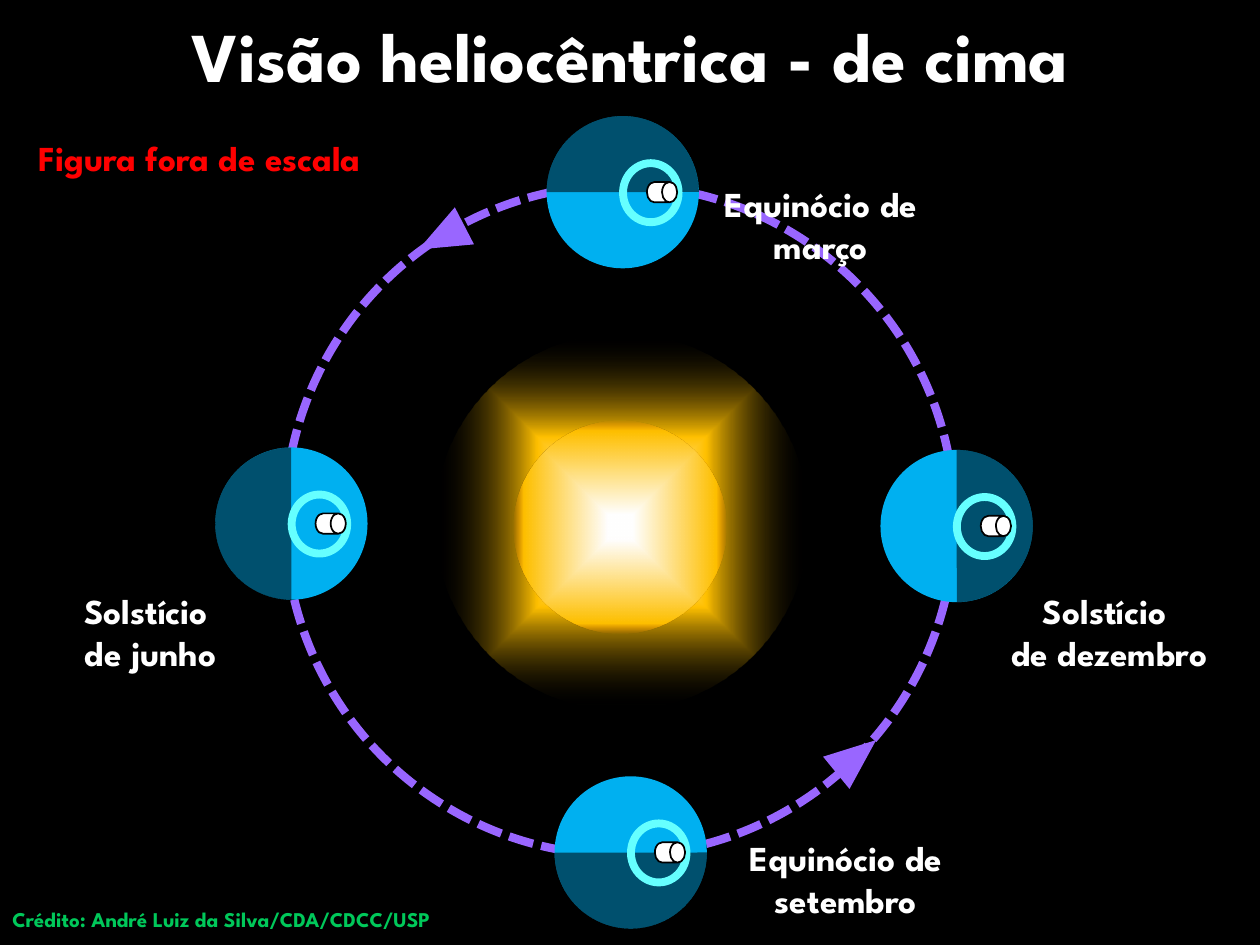
from typing import NamedTuple

from pptx import Presentation
from pptx.dml.color import RGBColor
from pptx.enum.dml import MSO_LINE as Dash
from pptx.enum.shapes import MSO_SHAPE as Kind
from pptx.enum.text import MSO_ANCHOR as Anchor, MSO_AUTO_SIZE as Auto, PP_ALIGN as Align
from pptx.oxml import parse_xml
from pptx.oxml.ns import nsdecls, qn
from pptx.util import Cm, Pt

FONT = "League Spartan"
WHITE, BLACK = "FFFFFF", "000000"
BLUE, CYAN, VIOLET = "00B0F0", "66FFFF", "9966FF"
EARTH = 3.07
HALF = (54.09, 162.02)


class Box(NamedTuple):
    x: float
    y: float
    w: float
    h: float


class Label(NamedTuple):
    text: str
    box: Box
    size: int = 20
    color: str = WHITE
    align: Align = Align.CENTER


class Earth(NamedTuple):
    x: float
    y: float
    turn: int


class Arrow(NamedTuple):
    x: float
    y: float
    turn: float


class Glow(NamedTuple):
    box: Box
    stops: tuple[tuple[int, str], ...]


LABELS = [
    Label("Solstício \nde junho", Box(0.79, 11.76, 4.5, 1.96)),
    Label("Solstício \nde dezembro", Box(19.71, 11.76, 5.31, 1.96)),
    Label("Equinócio de março", Box(14.3, 3.56, 4.5, 1.96)),
    Label("Equinócio de setembro", Box(14.4, 16.74, 5.31, 1.96)),
    Label("Crédito: André Luiz da Silva/CDA/CDCC/USP",
          Box(0, 18.16, 25.4, 0.76), 12, "00C85A", Align.LEFT),
    Label("Figura fora de escala", Box(0.53, 2.62, 9, 1.12), 20, "FF0000", Align.LEFT),
]
EARTHS = [
    Earth(4.34, 9.02, 180),
    Earth(17.75, 9.07, 0),
    Earth(11.18, 15.65, 90),
    Earth(11.02, 2.34, 270),
]
ARROWS = [Arrow(8.48, 4.27, 242.7), Arrow(16.84, 14.73, 50.6)]
GLOWS = [
    Glow(Box(8.76, 6.73, 7.54, 7.57), ((7, WHITE), (45, "FFC000"), (100, BLACK))),
    Glow(Box(10.36, 8.48, 4.29, 4.29), ((12, WHITE), (90, "FFC000"), (100, "EE8800"))),
]


def tint(fmt, color: str) -> None:
    fmt.rgb = RGBColor.from_string(color)


def style(frame, size: int, color: str, align: Align) -> None:
    for para in frame.paragraphs:
        para.alignment = align
        font = para.font
        font.name, font.size, font.bold = FONT, Pt(size), True
        tint(font.color, color)


def draw(shapes, kind: Kind, box: Box, fill: str = "", line: str = "",
         width: float = 1, turn: float = 0):
    shape = shapes.add_shape(kind, *map(Cm, box))
    shape.shadow.inherit = False
    shape.rotation = turn
    if fill:
        shape.fill.solid()
        tint(shape.fill.fore_color, fill)
    else:
        shape.fill.background()
    if line:
        tint(shape.line.color, line)
        shape.line.width = Pt(width)
    else:
        shape.line.fill.background()
    return shape


def write(shapes, label: Label) -> None:
    frame = shapes.add_textbox(*map(Cm, label.box)).text_frame
    frame.word_wrap = True
    frame.auto_size = Auto.SHAPE_TO_FIT_TEXT
    frame.text = label.text
    style(frame, label.size, label.color, label.align)


def shade(shapes, box: Box, turn: int) -> None:
    night = draw(shapes, Kind.CHORD, box, BLACK, turn=turn)
    night.adjustments[0], night.adjustments[1] = HALF
    props = night._element.spPr
    props.find(qn("a:xfrm")).set("flipH", "1")
    color = props.find(qn("a:solidFill")).find(qn("a:srgbClr"))
    color.append(parse_xml(f'<a:alpha {nsdecls("a")} val="54000"/>'))


def globe(shapes, earth: Earth) -> None:
    group = shapes.add_group_shape().shapes
    x, y, turn = earth
    disc = Box(x, y, EARTH, EARTH)
    draw(group, Kind.OVAL, disc, BLUE)
    shade(group, disc, turn)
    draw(group, Kind.OVAL, Box(x + 1.54, y + 0.95, 1.12, 1.19), line=CYAN, width=4.5)
    can = draw(group, Kind.CAN, Box(x + 2.12, y + 1.23, 0.41, 0.61), WHITE, BLACK, turn=90)
    can.adjustments[0] = 0.75


def shine(shapes, glow: Glow) -> None:
    props = draw(shapes, Kind.OVAL, glow.box)._element.spPr
    last = len(glow.stops) - 1
    stops = "".join(
        f'<a:gs pos="{pos * 1000}"><a:srgbClr val="{color}">'
        f'<a:alpha val="{0 if i == last else 100000}"/></a:srgbClr></a:gs>'
        for i, (pos, color) in enumerate(glow.stops))
    fill = parse_xml(
        f'<a:gradFill {nsdecls("a")} rotWithShape="1"><a:gsLst>{stops}</a:gsLst>'
        '<a:path path="shape"><a:fillToRect l="50000" t="50000" r="50000" b="50000"/>'
        '</a:path></a:gradFill>')
    props.replace(props.find(qn("a:noFill")), fill)


def main() -> None:
    deck = Presentation()
    deck.slide_width, deck.slide_height = Cm(25.4), Cm(19.05)
    slide = deck.slides.add_slide(deck.slide_layouts[5])
    slide.background.fill.solid()
    tint(slide.background.fill.fore_color, BLACK)
    shapes = slide.shapes

    title = shapes.title
    title.left, title.top, title.width, title.height = map(Cm, Box(1.9, 0.15, 21.6, 1.9))
    frame = title.text_frame
    frame.text = "Visão heliocêntrica - de cima"
    frame.vertical_anchor = Anchor.MIDDLE
    style(frame, 40, WHITE, Align.CENTER)

    orbit = draw(shapes, Kind.OVAL, Box(5.74, 3.73, 13.51, 13.51), line=VIOLET, width=4.75)
    orbit.line.dash_style = Dash.SQUARE_DOT
    for x, y, turn in ARROWS:
        draw(shapes, Kind.ISOSCELES_TRIANGLE, Box(x, y, 0.84, 1.04), VIOLET, turn=turn)
    for label in LABELS:
        write(shapes, label)
    for earth in EARTHS:
        globe(shapes, earth)
    sun = shapes.add_group_shape().shapes
    for glow in GLOWS:
        shine(sun, glow)
    deck.save("out.pptx")


if __name__ == "__main__":
    main()
